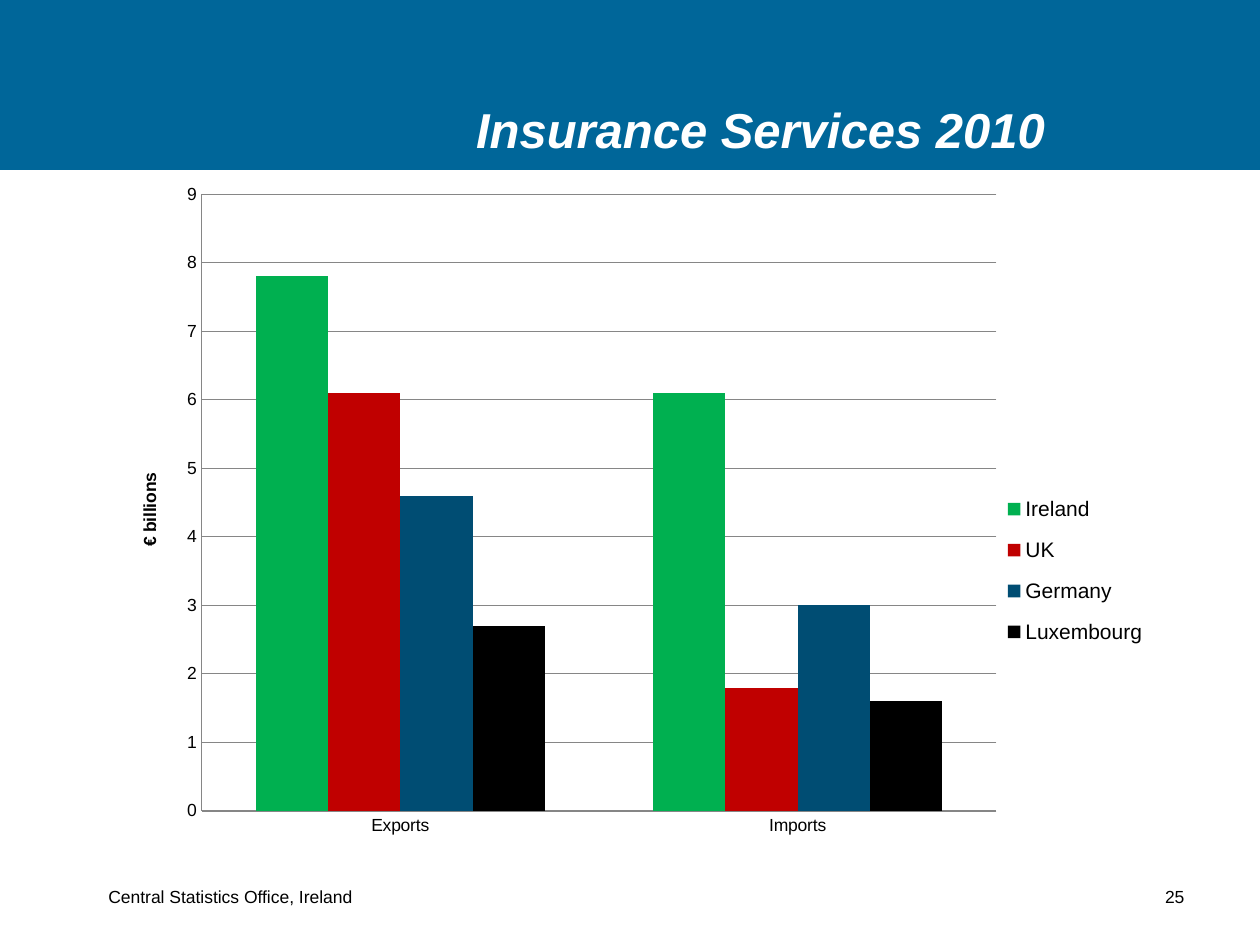
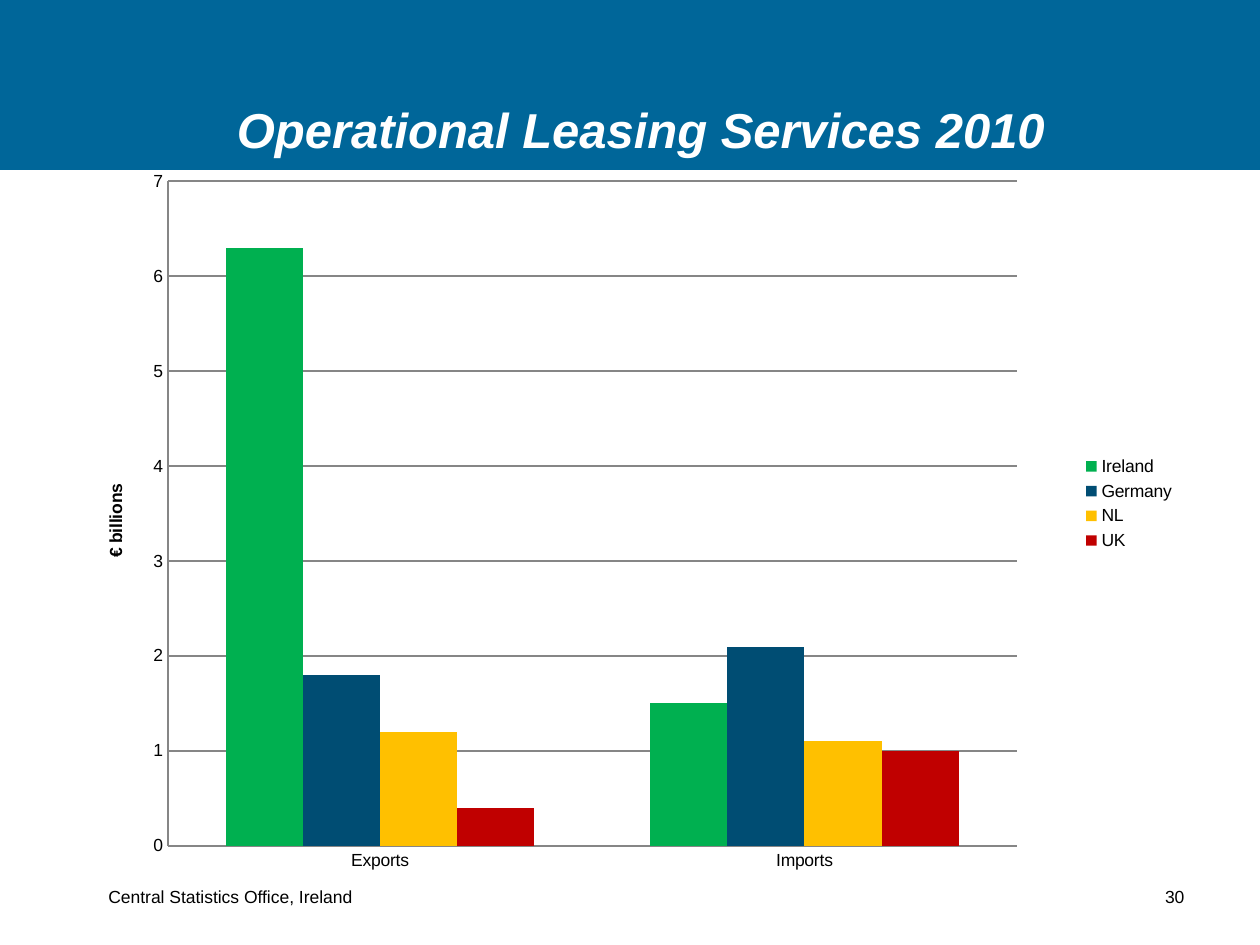
from lxml.etree import SubElement
from pptx import Presentation
from pptx.chart.data import CategoryChartData
from pptx.dml.color import RGBColor
from pptx.enum.chart import XL_CHART_TYPE, XL_LEGEND_POSITION, XL_TICK_MARK
from pptx.enum.shapes import MSO_SHAPE
from pptx.enum.text import MSO_ANCHOR, PP_ALIGN
from pptx.oxml import parse_xml
from pptx.oxml.ns import nsdecls, qn
from pptx.util import Pt

SCALE = 914400 / 126
WIDE, HIGH = 1260, 945
FACE = "Arial"
BLUE, WHITE, BLACK, GREY = "006699", "FFFFFF", "000000", "868686"
TINTS = {"Ireland": "00B050", "UK": "C00000", "Germany": "004D73",
         "Luxembourg": "000000", "NL": "FFC000"}


def px(size):
    return round(size * SCALE)


def place(box):
    return [px(side) for side in box]


def color(code):
    return RGBColor.from_string(code)


def style(font, size, tint=BLACK, bold=False, slant=False):
    font.name = FACE
    font.size = Pt(size)
    font.bold = bold
    font.italic = slant
    font.color.rgb = color(tint)


def write(slide, box, text, align=PP_ALIGN.LEFT, lead=None, tab=None, **look):
    frame = slide.shapes.add_textbox(*place(box)).text_frame
    frame.word_wrap = True
    frame.vertical_anchor = MSO_ANCHOR.BOTTOM
    para = frame.paragraphs[0]
    para.alignment = align
    if lead:
        para.line_spacing = lead
    if tab:
        stops = SubElement(para._p.get_or_add_pPr(), qn("a:tabLst"))
        SubElement(stops, qn("a:tab"), pos=str(px(tab)), algn="r")
    run = para.add_run()
    run.text = text
    style(run.font, **look)


def head(slide, box, title):
    left, top, width, height = box
    band = slide.shapes.add_shape(MSO_SHAPE.RECTANGLE, *place(box))
    band.shadow.inherit = False
    band.fill.solid()
    band.fill.fore_color.rgb = color(BLUE)
    band.line.fill.background()
    write(slide, (left + 144, top + 81, 913, 121), title,
          align=PP_ALIGN.RIGHT, size=28, tint=WHITE, bold=True, slant=True)


def foot(slide, box, page):
    write(slide, box, f"Central Statistics Office, Ireland\t{page}",
          lead=0.8, tab=box[2] - 39, size=10)


def layout(node, spot, rect, inner=False):
    target = '<c:layoutTarget val="inner"/>' if inner else ""
    modes = "".join(f'<c:{key}Mode val="edge"/>' for key in "xy")
    sides = "".join(f'<c:{key} val="{part}"/>' for key, part in zip("xywh", rect))
    for old in node.findall(qn("c:layout")):
        node.remove(old)
    node.insert(spot, parse_xml(
        f'<c:layout {nsdecls("c")}><c:manualLayout>{target}{modes}{sides}'
        '</c:manualLayout></c:layout>'))


def graph(slide, box, data, top, plot, key=None, size=10):
    source = CategoryChartData()
    source.categories = ["Exports", "Imports"]
    for name, values in data.items():
        source.add_series(name, values)
    chart = slide.shapes.add_chart(
        XL_CHART_TYPE.COLUMN_CLUSTERED, *place(box), source).chart
    chart.has_title = False
    style(chart.font, 10)

    bars = chart.plots[0]
    bars.vary_by_categories = False
    bars.gap_width = 150
    bars.overlap = 0
    for line in bars.series:
        line.format.fill.solid()
        line.format.fill.fore_color.rgb = color(TINTS[line.name])

    scale = chart.value_axis
    scale.minimum_scale, scale.maximum_scale, scale.major_unit = 0, top, 1
    scale.has_major_gridlines = True
    title = scale.axis_title.text_frame
    title.text = "€ billions"
    style(title.paragraphs[0].runs[0].font, 10, bold=True)
    for axis in (scale, chart.category_axis):
        axis.major_tick_mark = axis.minor_tick_mark = XL_TICK_MARK.NONE
    for part in (scale, chart.category_axis, scale.major_gridlines):
        part.format.line.color.rgb = color(GREY)
        part.format.line.width = Pt(0.75)

    chart.has_legend = True
    chart.legend.position = XL_LEGEND_POSITION.RIGHT
    chart.legend.include_in_layout = False
    style(chart.legend.font, size)
    area, = chart.element.xpath("c:chart/c:plotArea")
    layout(area, 0, plot, inner=True)
    if key:
        legend, = chart.element.xpath("c:chart/c:legend")
        layout(legend, 1, key)


def page(deck, title, number, box, **chart):
    slide = deck.slides.add_slide(deck.slide_layouts[6])
    head(slide, (0, -37, WIDE, 207), title)
    foot(slide, (96, 874, 1115, 39), number)
    graph(slide, box, **chart)


def main():
    deck = Presentation()
    deck.slide_width, deck.slide_height = px(WIDE), px(HIGH)
    page(deck, "Insurance Services 2010", 25, (76, 181, 1092, 829),
         data={"Ireland": (7.8, 6.1), "UK": (6.1, 1.8),
               "Germany": (4.6, 3), "Luxembourg": (2.7, 1.6)},
         top=9, plot=(0.115, 0.016, 0.728, 0.744),
         key=(0.84, 0.36, 0.15, 0.22), size=12)
    page(deck, "Operational Leasing Services 2010", 30, (84, 62, 1104, 883),
         data={"Ireland": (6.3, 1.5), "Germany": (1.8, 2.1),
               "NL": (1.2, 1.1), "UK": (0.4, 1)},
         top=7, plot=(0.076, 0.135, 0.769, 0.753))
    deck.save("out.pptx")


if __name__ == "__main__":
    main()
